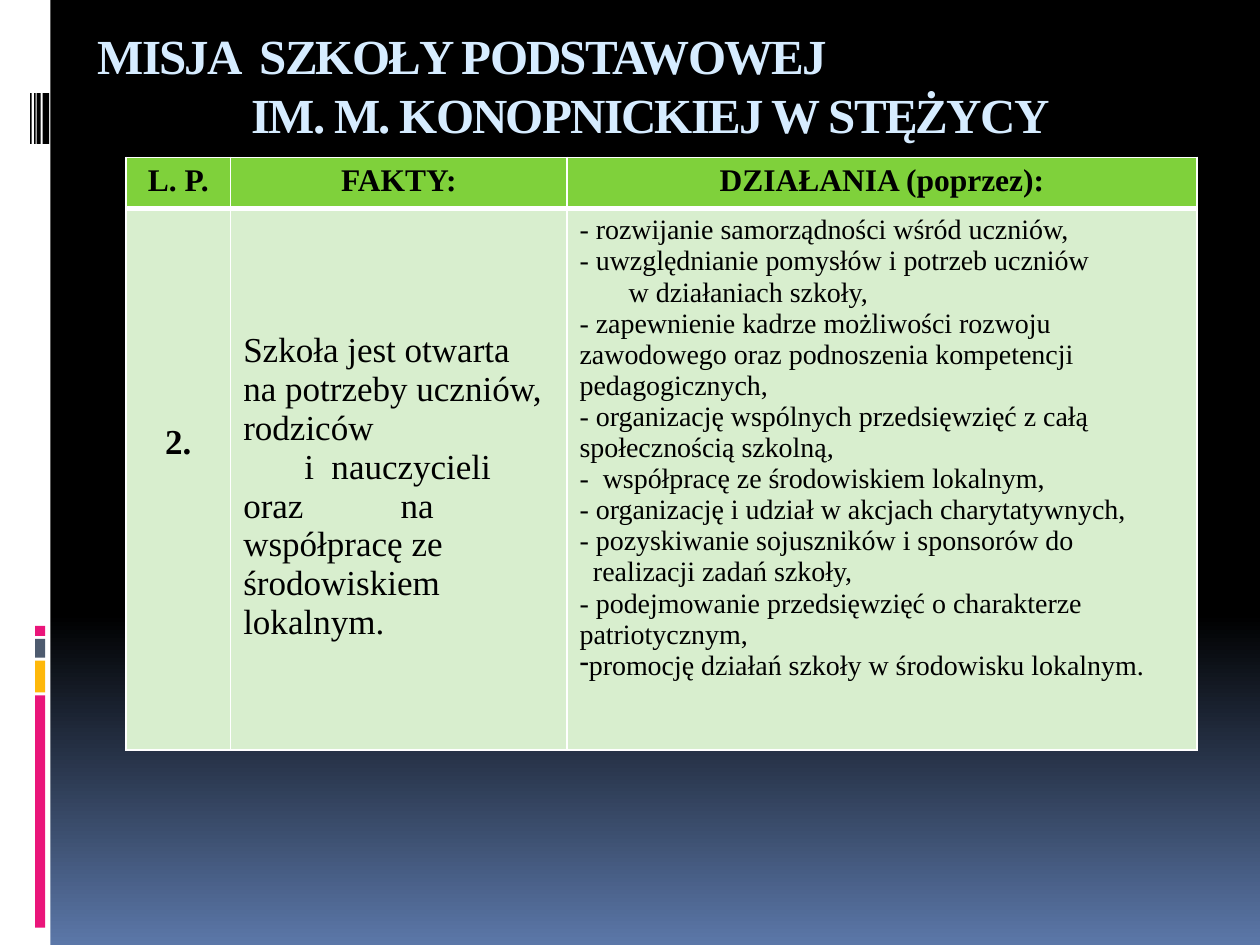
from itertools import product
from lxml.etree import SubElement as Sub
from pptx import Presentation
from pptx.dml.color import RGBColor as RGB
from pptx.enum.shapes import MSO_SHAPE as SHAPE
from pptx.enum.text import MSO_ANCHOR as ANCHOR, PP_ALIGN as ALIGN
from pptx.oxml.ns import qn
from pptx.util import Cm, Pt

COLORS = {"white": "FFFFFF", "black": "000000", "pink": "EA157A", "yellow": "FEB80A",
          "slate": "4E5B6F", "sky": "5B77A8", "title": "D6ECFF",
          "head": "7FD13B", "body": "D8EECE"}
FONT = "Times New Roman"

TITLE = [("MISJA  SZKOŁY PODSTAWOWEJ", 0.25),
         ("IM. M. KONOPNICKIEJ W STĘŻYCY", 3.35)]
HEADS = ["L. P.", "FAKTY:", "DZIAŁANIA (poprzez):"]
FACTS = [("Szkoła jest otwarta  na potrzeby uczniów, rodziców", 0),
         ("i  nauczycieli", 1.23),
         ("oraz\tna współpracę ze środowiskiem lokalnym.", 0)]
ACTIONS = [("- rozwijanie samorządności wśród uczniów,", 0),
           ("- uwzględnianie pomysłów i potrzeb uczniów", 0),
           ("w działaniach szkoły,", 0.99),
           ("- zapewnienie kadrze możliwości rozwoju zawodowego oraz podnoszenia "
            "kompetencji pedagogicznych,", 0),
           ("- organizację wspólnych przedsięwzięć z całą społecznością szkolną,", 0),
           ("-  współpracę ze środowiskiem lokalnym,", 0),
           ("- organizację i udział w akcjach charytatywnych,", 0),
           ("- pozyskiwanie sojuszników i sponsorów do", 0),
           ("realizacji zadań szkoły,", 0.27),
           ("- podejmowanie przedsięwzięć o charakterze patriotycznym,", 0),
           ("promocję działań szkoły w środowisku lokalnym.", 0)]

HEAD_FORMAT = {"size": Pt(18), "bold": True}
ROWS = [[([(h, 0)], HEAD_FORMAT, ALIGN.CENTER, 0.13) for h in HEADS],
        [([("2.", 0)], {"size": Pt(20), "bold": True}, ALIGN.CENTER, 4.33),
         (FACTS, {"size": Pt(20), "bold": False}, ALIGN.LEFT, 2.48),
         (ACTIONS, {"size": Pt(16), "bold": False}, ALIGN.LEFT, 0.13)]]
COL_WIDTHS = [2.11, 6.78, 12.7]
ROW_HEIGHTS = [1.03, 10.92]
STRIPES = [("pink", 0.2), ("slate", 0.38), ("yellow", 0.64), ("pink", 4.68)]
BARCODE = [(0.61, 0.03), (0.69, 0.03), (0.74, 0.08), (0.86, 0.13)]


def color(name):
    return RGB.from_string(COLORS[name])


def add_rect(shapes, name, *box):
    sp = shapes.add_shape(SHAPE.RECTANGLE, *map(Cm, box))
    sp.shadow.inherit = False
    sp.fill.solid()
    sp.fill.fore_color.rgb = color(name)
    sp.line.fill.background()


def write(tf, lines, fmt, align, ink):
    for i, (text, indent) in enumerate(lines):
        p = tf.paragraphs[0] if i == 0 else tf.add_paragraph()
        p.alignment = align
        p._p.get_or_add_pPr().set("marL", str(Cm(indent)))
        r = p.add_run()
        r.text = text
        for key, value in {"name": FONT, **fmt}.items():
            setattr(r.font, key, value)
        r.font.color.rgb = color(ink)


def add_borders(cell, widths):
    tcPr = cell._tc.get_or_add_tcPr()
    for side, width in widths.items():
        ln = Sub(tcPr, qn("a:ln" + side), w=str(Pt(width)))
        Sub(Sub(ln, qn("a:solidFill")), qn("a:srgbClr"), val=COLORS["white"])


def add_title(shapes):
    tf = shapes.add_textbox(*map(Cm, (1.47, 0.43, 23.29, 2.54))).text_frame
    tf.word_wrap = True
    tf.vertical_anchor = ANCHOR.MIDDLE
    write(tf, TITLE, {"size": Pt(28), "bold": True}, ALIGN.LEFT, "title")
    for p in tf.paragraphs:
        p.runs[0].font._element.set("spc", "-100")


def add_mission_table(shapes):
    frame = shapes.add_table(2, 3, Cm(2.54), Cm(3.17), Cm(sum(COL_WIDTHS)), Cm(sum(ROW_HEIGHTS)))
    table = frame.table
    for col, width in zip(table.columns, COL_WIDTHS):
        col.width = Cm(width)
    for row, height in zip(table.rows, ROW_HEIGHTS):
        row.height = Cm(height)
    for i, j in product(range(2), range(3)):
        cell = table.cell(i, j)
        lines, fmt, align, top = ROWS[i][j]
        add_borders(cell, {"L": 1, "R": 1, "T": 3 if i else 1, "B": 1 if i else 3})
        cell.fill.solid()
        cell.fill.fore_color.rgb = color("body" if i else "head")
        cell.margin_top = Cm(top)
        write(cell.text_frame, lines, fmt, align, "black")
    tabs = Sub(table.cell(1, 1).text_frame.paragraphs[-1]._p.pPr, qn("a:tabLst"))
    Sub(tabs, qn("a:tab"), pos=str(Cm(3.17)), algn="l")
    last = table.cell(1, 2).text_frame.paragraphs[-1]._p.pPr
    last.set("indent", "0")
    Sub(last, qn("a:buChar"), char="-")


def main():
    prs = Presentation()
    prs.slide_width, prs.slide_height = Cm(25.4), Cm(19.05)
    s = prs.slides.add_slide(prs.slide_layouts[6])
    fill = s.background.fill
    fill.gradient()
    fill.gradient_angle = 270
    for stop, (name, pos) in zip(fill.gradient_stops, [("black", 0.65), ("sky", 1)]):
        stop.color.rgb = color(name)
        stop.position = pos
    add_rect(s.shapes, "white", 0, 0, 1.02, 19.05)
    y = 12.62
    for name, height in STRIPES:
        add_rect(s.shapes, name, 0.71, y, 0.2, height)
        y += height + 0.06
    for x, width in BARCODE:
        add_rect(s.shapes, "black", x, 1.88, width, 1.02)
    add_title(s.shapes)
    add_mission_table(s.shapes)
    prs.save("out.pptx")


if __name__ == "__main__":
    main()
